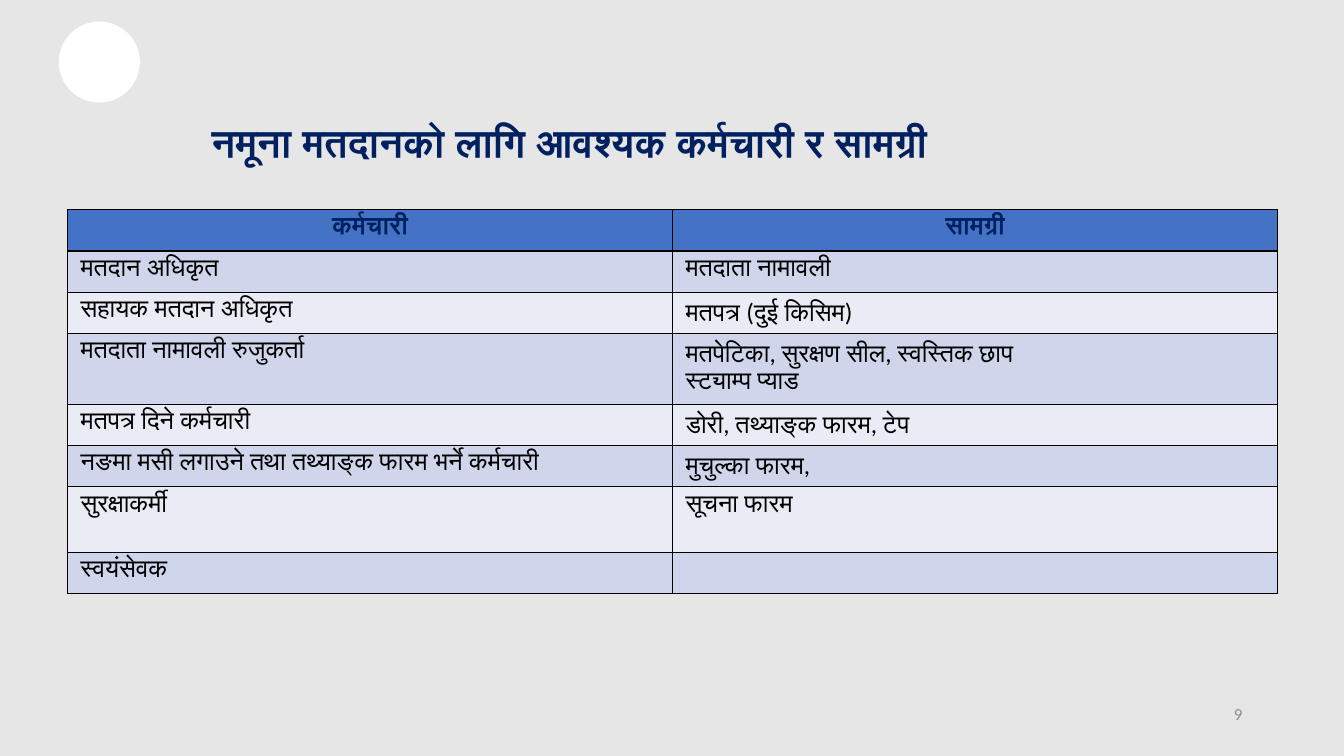
"""Build the slide listing staff and materials for the mock poll."""
from lxml.etree import SubElement
from pptx import Presentation
from pptx.dml.color import RGBColor
from pptx.enum.shapes import MSO_SHAPE
from pptx.enum.text import MSO_ANCHOR, PP_ALIGN
from pptx.oxml.ns import qn
from pptx.util import Inches, Pt

COLORS = {
    "background": "E7E6E6",
    "badge": "FFFFFF",
    "navy": "002060",
    "header": "4472C4",
    "odd": "CFD5EA",
    "even": "E9EBF5",
    "black": "000000",
    "number": "8C8C8C",
}
ROWS = [
    ("कर्मचारी", "सामग्री"),
    ("मतदान अधिकृत", "मतदाता नामावली"),
    ("सहायक मतदान अधिकृत", "मतपत्र (दुई किसिम)"),
    ("मतदाता नामावली रुजुकर्ता", "मतपेटिका, सुरक्षण सील, स्वस्तिक छाप\nस्ट्याम्प प्याड"),
    ("मतपत्र दिने कर्मचारी", "डोरी, तथ्याङ्क फारम, टेप"),
    ("नङमा मसी लगाउने तथा तथ्याङ्क फारम भर्ने कर्मचारी", "मुचुल्का फारम,"),
    ("सुरक्षाकर्मी", "सूचना फारम"),
    ("स्वयंसेवक", ""),
]
ROW_HEIGHT = 0.41
TALL_ROWS = {3: 0.65, 6: 0.65}


def color(name):
    return RGBColor.from_string(COLORS[name])


def style(paragraph, font_name, size, color_name, bold=False, align=PP_ALIGN.LEFT):
    paragraph.alignment = align
    font = paragraph.font
    font.name, font.size, font.bold = font_name, Pt(size), bold
    font.color.rgb = color(color_name)


presentation = Presentation()
presentation.slide_width = Inches(13.33)
presentation.slide_height = Inches(7.5)
slide = presentation.slides.add_slide(presentation.slide_layouts[6])
slide.background.fill.solid()
slide.background.fill.fore_color.rgb = color("background")

badge = slide.shapes.add_shape(
    MSO_SHAPE.OVAL, Inches(0.59), Inches(0.22), Inches(0.79), Inches(0.79))
badge.shadow.inherit = False
badge.fill.solid()
badge.fill.fore_color.rgb = color("badge")
badge.line.color.rgb = color("badge")
badge.line.width = Pt(1)

title = slide.shapes.add_textbox(
    Inches(2), Inches(1.12), Inches(8.07), Inches(0.63)).text_frame
title.word_wrap = True
title.vertical_anchor = MSO_ANCHOR.MIDDLE
title.text = "नमूना मतदानको लागि आवश्यक कर्मचारी र सामग्री"
title.paragraphs[0].line_spacing = 0.9
style(title.paragraphs[0], "Lato", 28, "navy", bold=True)

checklist = slide.shapes.add_table(
    len(ROWS), 2, Inches(0.67), Inches(2.08), Inches(12),
    Inches(ROW_HEIGHT * len(ROWS))).table
for column in checklist.columns:
    column.width = Inches(6)

for row_index, entries in enumerate(ROWS):
    is_header = row_index == 0
    band = "header" if is_header else "odd" if row_index % 2 else "even"
    checklist.rows[row_index].height = Inches(TALL_ROWS.get(row_index, ROW_HEIGHT))
    for column_index, entry in enumerate(entries):
        cell = checklist.cell(row_index, column_index)
        cell.margin_left = cell.margin_right = Inches(0.13)
        cell.margin_top = cell.margin_bottom = Inches(0.05)
        cell.text = entry
        for paragraph in cell.text_frame.paragraphs:
            style(paragraph, "Calibri", 18, "navy" if is_header else "black",
                  bold=is_header,
                  align=PP_ALIGN.CENTER if is_header else PP_ALIGN.LEFT)
        for side in ("a:lnL", "a:lnR", "a:lnT", "a:lnB"):
            border = SubElement(cell._tc.get_or_add_tcPr(), qn(side), w=str(Pt(1)))
            border_fill = SubElement(border, qn("a:solidFill"))
            SubElement(border_fill, qn("a:srgbClr"), val=COLORS["black"])
        cell.fill.solid()
        cell.fill.fore_color.rgb = color(band)

page_number = slide.shapes.add_textbox(
    Inches(9.42), Inches(6.88), Inches(3), Inches(0.4)).text_frame
page_number.word_wrap = True
page_number.vertical_anchor = MSO_ANCHOR.MIDDLE
page_number.text = "9"
style(page_number.paragraphs[0], "Calibri", 12, "number", align=PP_ALIGN.RIGHT)

presentation.save("out.pptx")
